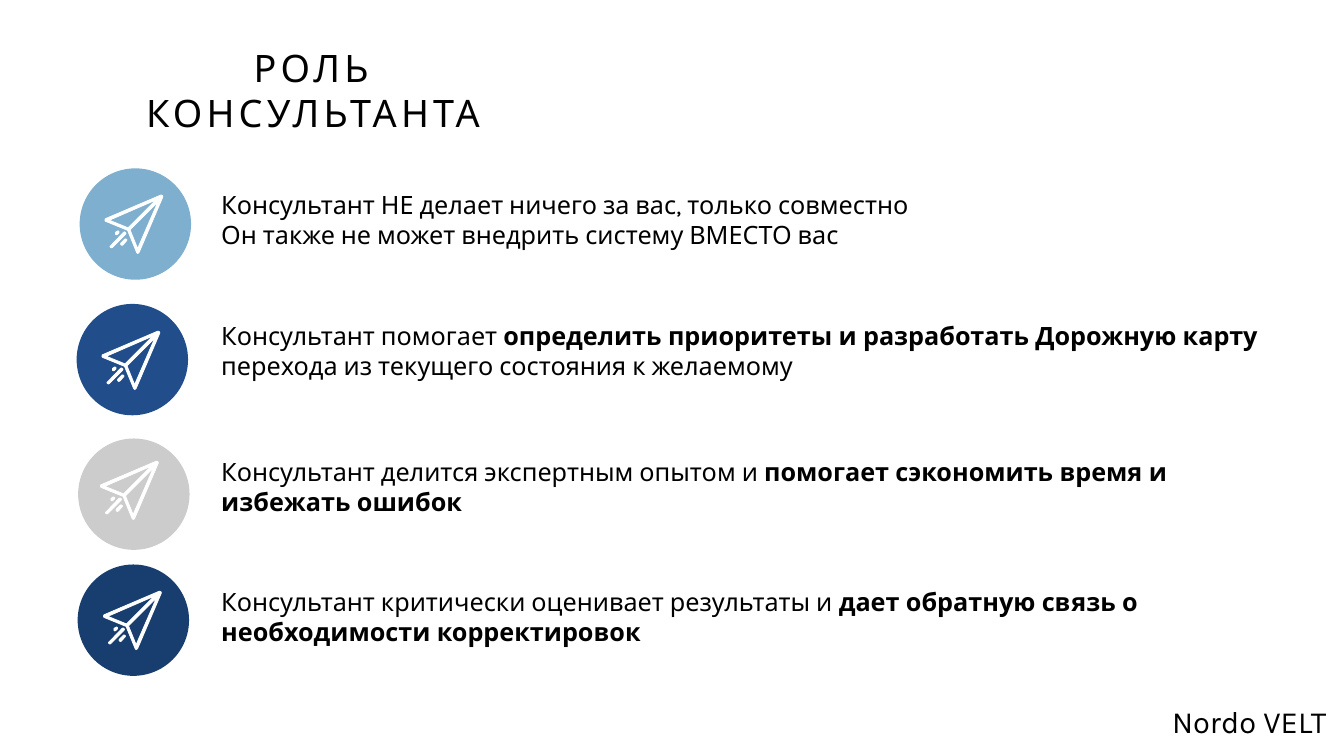
from dataclasses import dataclass

from pptx import Presentation
from pptx.dml.color import RGBColor
from pptx.enum.shapes import MSO_SHAPE
from pptx.enum.text import MSO_AUTO_SIZE, PP_ALIGN
from pptx.util import Inches, Pt


@dataclass(frozen=True)
class Theme:
    font: str = "Karla"
    ink: str = "000000"
    paper: str = "FFFFFF"
    sky: str = "7FAFCF"
    blue: str = "214E8B"
    grey: str = "CCCCCC"
    navy: str = "183D6F"
    title_size: int = 54
    footer_size: int = 44
    body_size: int = 36


@dataclass(frozen=True)
class Run:
    text: str
    bold: bool = False


@dataclass(frozen=True)
class Point:
    """One row: a coloured badge with a plane, and its statement."""
    color: str
    badge: tuple[float, float]
    plane: tuple[float, float]
    text_top: float
    text_width: float
    paragraphs: list[list[Run]]


THEME = Theme()
BADGE_SIZE = 2.21
TEXT_LEFT = 4.29
TEXT_HEIGHT = 1.31

# Paper plane in hundredths of an inch: body, two folds, three trails
PLANE_CONTOURS = [
    [(115, 2), (114, 1), (112, 0), (111, 0), (1, 47), (0, 50), (1, 52), (45, 70),
     (63, 114), (65, 116), (67, 115), (68, 114), (115, 4)],
    [(65, 106), (50, 69), (105, 14)],
    [(9, 50), (101, 10), (46, 65)],
    [(42, 87), (40, 87), (32, 95), (31, 97), (32, 99), (34, 100), (36, 99),
     (43, 91), (44, 89), (43, 88)],
    [(42, 76), (41, 74), (39, 73), (37, 74), (11, 101), (10, 102), (11, 104),
     (13, 105), (15, 104), (41, 78)],
    [(25, 78), (28, 75), (28, 73), (28, 72), (26, 71), (24, 72), (21, 74),
     (21, 76), (21, 78), (23, 79)],
]

POINTS = [
    Point(THEME.sky, (1.58, 3.34), (2.08, 3.87), 3.71, 17.95, [
        [Run("Консультант НЕ делает ничего за вас, только совместно")],
        [Run("Он также не может внедрить систему ВМЕСТО вас")],
    ]),
    Point(THEME.blue, (1.52, 6.03), (2.02, 6.57), 6.31, 20.95, [[
        Run("Консультант помогает "),
        Run("определить приоритеты и разработать Дорожную карту ", bold=True),
        Run("перехода из текущего состояния к желаемому"),
    ]]),
    Point(THEME.grey, (1.55, 8.7), (1.99, 9.15), 9, 19.95, [[
        Run("Консультант делится экспертным опытом и "),
        Run("помогает сэкономить время и избежать ошибок", bold=True),
    ]]),
    Point(THEME.navy, (1.54, 11.2), (2.05, 11.73), 11.58, 19.95, [[
        Run("Консультант критически оценивает результаты и "),
        Run("дает обратную связь о необходимости корректировок", bold=True),
    ]]),
]


def add_text(slide, paragraphs: list[list[Run]], left: float, top: float,
             width: float, height: float, *, size: int,
             align: PP_ALIGN = PP_ALIGN.LEFT, spacing: float = 0) -> None:
    """Place a text box; spacing is the letter spacing in points."""
    box = slide.shapes.add_textbox(Inches(left), Inches(top), Inches(width), Inches(height))
    frame = box.text_frame
    frame.word_wrap = True
    frame.auto_size = MSO_AUTO_SIZE.SHAPE_TO_FIT_TEXT
    for index, runs in enumerate(paragraphs):
        paragraph = frame.add_paragraph() if index else frame.paragraphs[0]
        paragraph.alignment = align
        for part in runs:
            run = paragraph.add_run()
            run.text = part.text
            run.font.name = THEME.font
            run.font.size = Pt(size)
            run.font.bold = part.bold
            run.font.color.rgb = RGBColor.from_string(THEME.ink)
            if spacing:
                run._r.get_or_add_rPr().set("spc", str(round(spacing * 100)))


def paint(shape, color: str) -> None:
    shape.shadow.inherit = False
    shape.fill.solid()
    shape.fill.fore_color.rgb = RGBColor.from_string(color)


def add_badge(slide, left: float, top: float, color: str) -> None:
    badge = slide.shapes.add_shape(MSO_SHAPE.OVAL, Inches(left), Inches(top),
                                   Inches(BADGE_SIZE), Inches(BADGE_SIZE))
    paint(badge, color)
    badge.line.fill.background()


def add_plane(slide, left: float, top: float) -> None:
    body, *details = PLANE_CONTOURS
    builder = slide.shapes.build_freeform(*body[0], scale=Inches(0.01))
    builder.add_line_segments(body[1:], close=True)
    for contour in details:
        builder.move_to(*contour[0])
        builder.add_line_segments(contour[1:], close=True)
    plane = builder.convert_to_shape(Inches(left), Inches(top))
    paint(plane, THEME.paper)
    plane.line.color.rgb = RGBColor.from_string(THEME.paper)
    plane.line.width = Pt(1)


def add_point(slide, point: Point) -> None:
    add_badge(slide, *point.badge, point.color)
    add_plane(slide, *point.plane)
    add_text(slide, point.paragraphs, TEXT_LEFT, point.text_top,
             point.text_width, TEXT_HEIGHT, size=THEME.body_size)


def main() -> None:
    deck = Presentation()
    deck.slide_width = Inches(26.66)
    deck.slide_height = Inches(15)
    slide = deck.slides.add_slide(deck.slide_layouts[6])
    slide.background.fill.solid()
    slide.background.fill.fore_color.rgb = RGBColor.from_string(THEME.paper)

    add_text(slide, [[Run("РОЛЬ КОНСУЛЬТАНТА")]], 1.5, 0.84, 9.43, 1.01,
             size=THEME.title_size, align=PP_ALIGN.CENTER, spacing=6)
    for point in POINTS:
        add_point(slide, point)
    add_text(slide, [[Run("Nordo VELT")]], 23.15, 13.9, 3.51, 0.84,
             size=THEME.footer_size)
    deck.save("out.pptx")


if __name__ == "__main__":
    main()
